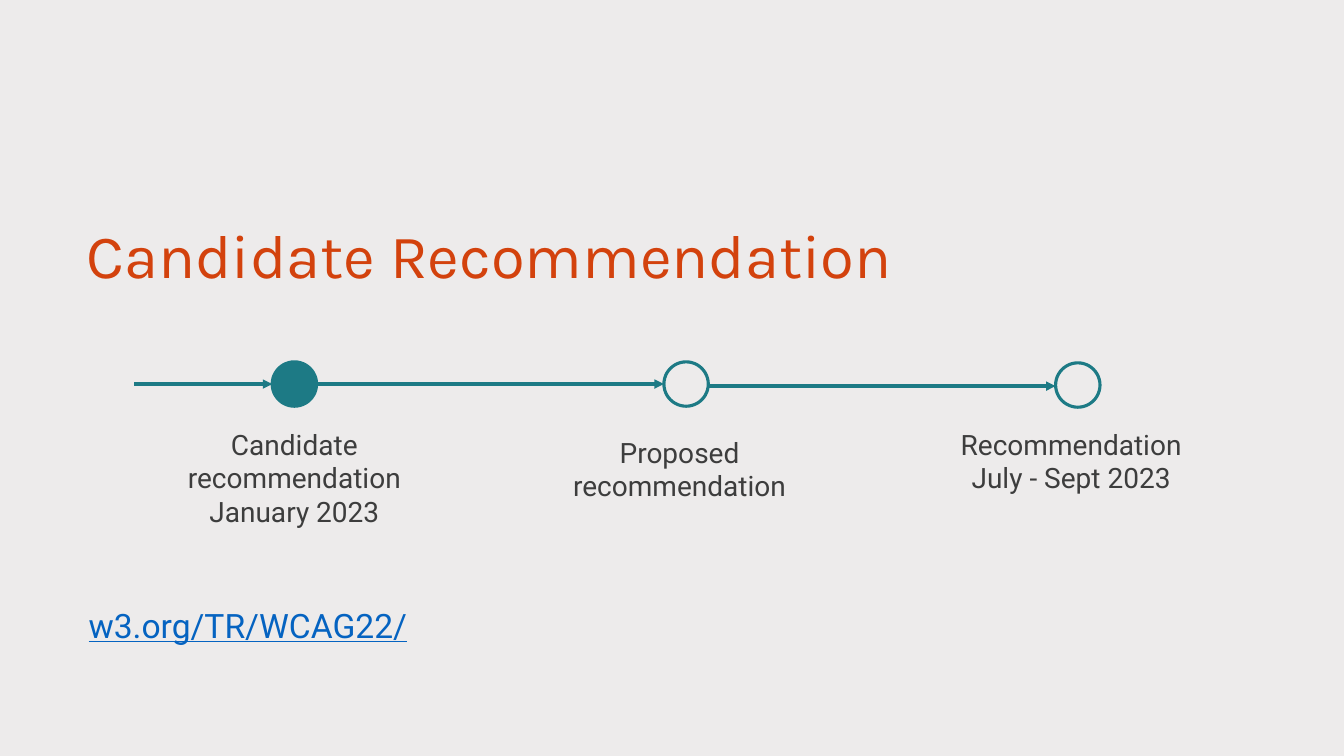
import pptx
import pptx.util
import pptx.dml.color
import pptx.enum.shapes
import pptx.enum.text
import pptx.oxml.ns
from lxml import etree

TITLE = "Candidate Recommendation"
LINK = "w3.org/TR/WCAG22/"
# lines, label left, top, width, height, dot top, dot filled
STAGES = [
    (["Candidate recommendation", "January 2023"], 1.42, 4.19, 3, 1.11, 3.59, True),
    (["Proposed recommendation"], 5.24, 4.27, 3, 0.77, 3.59, False),
    (["Recommendation", "July - Sept 2023"], 8.91, 4.19, 3.43, 0.77, 3.6, False),
]
COLORS = {"back": "EDEBEB", "title": "D3420D", "link": "0563C1",
          "text": "3D3D3D", "line": "1D7A85"}
START, FIRST, STEP, DOT = 1.33, 2.7, 3.885, 0.44
ARROW_TOPS = [3.81, 3.81, 3.83]

inch = pptx.util.Inches
ALIGN = pptx.enum.text.PP_ALIGN
ANCHOR = pptx.enum.text.MSO_ANCHOR


def color(name):
    return pptx.dml.color.RGBColor.from_string(COLORS[name])


def place(shape, left, top, width, height):
    shape.left, shape.top = inch(left), inch(top)
    shape.width, shape.height = inch(width), inch(height)


def write(shape, lines, size=20, face="Roboto", tint="text", align=ALIGN.LEFT,
          anchor=ANCHOR.TOP, space=1.0, under=False):
    frame = shape.text_frame
    frame.word_wrap = True
    frame.auto_size = pptx.enum.text.MSO_AUTO_SIZE.NONE
    frame.vertical_anchor = anchor
    frame.text = "\n".join(lines)
    for para in frame.paragraphs:
        para.alignment = align
        para.line_spacing = space
        for run in para.runs:
            font = run.font
            font.name, font.size = face, pptx.util.Pt(size)
            font.color.rgb = color(tint)
            font.underline = under


def stroke(shape):
    shape.line.color.rgb = color("line")
    shape.line.width = pptx.util.Pt(2.25)


def arrow(slide, left, right, top):
    link = slide.shapes.add_connector(
        pptx.enum.shapes.MSO_CONNECTOR.STRAIGHT,
        inch(left), inch(top), inch(right), inch(top))
    stroke(link)
    qn = pptx.oxml.ns.qn
    etree.SubElement(link.line._get_or_add_ln(), qn("a:tailEnd"), type="triangle")
    etree.SubElement(link._element.spPr, qn("a:effectLst"))


def dot(slide, left, top, filled):
    ring = slide.shapes.add_shape(
        pptx.enum.shapes.MSO_SHAPE.OVAL,
        inch(left), inch(top), inch(DOT), inch(DOT))
    ring.shadow.inherit = False
    stroke(ring)
    if filled:
        ring.fill.solid()
        ring.fill.fore_color.rgb = color("line")
    else:
        ring.fill.background()


def main():
    deck = pptx.Presentation()
    deck.slide_width, deck.slide_height = inch(13.33), inch(7.5)
    slide = deck.slides.add_slide(deck.slide_layouts[5])
    slide.background.fill.solid()
    slide.background.fill.fore_color.rgb = color("back")

    title = slide.shapes.title
    place(title, 0.76, 2.02, 8.43, 0.92)
    write(title, [TITLE], size=44, face="Karla", tint="title", anchor=ANCHOR.BOTTOM)

    box = slide.shapes.add_textbox(inch(0.78), inch(5.91), inch(8.27), inch(0.59))
    write(box, [LINK], size=24, tint="link", space=1.1, under=True)

    begin = START
    for i, (lines, left, top, width, height, level, filled) in enumerate(STAGES):
        label = slide.shapes.add_textbox(inch(left), inch(top), inch(width), inch(height))
        write(label, lines, align=ALIGN.CENTER)
        spot = FIRST + i * STEP
        dot(slide, spot, level, filled)
        arrow(slide, begin, spot, ARROW_TOPS[i])
        begin = spot + DOT

    deck.save("out.pptx")


if __name__ == "__main__":
    main()
